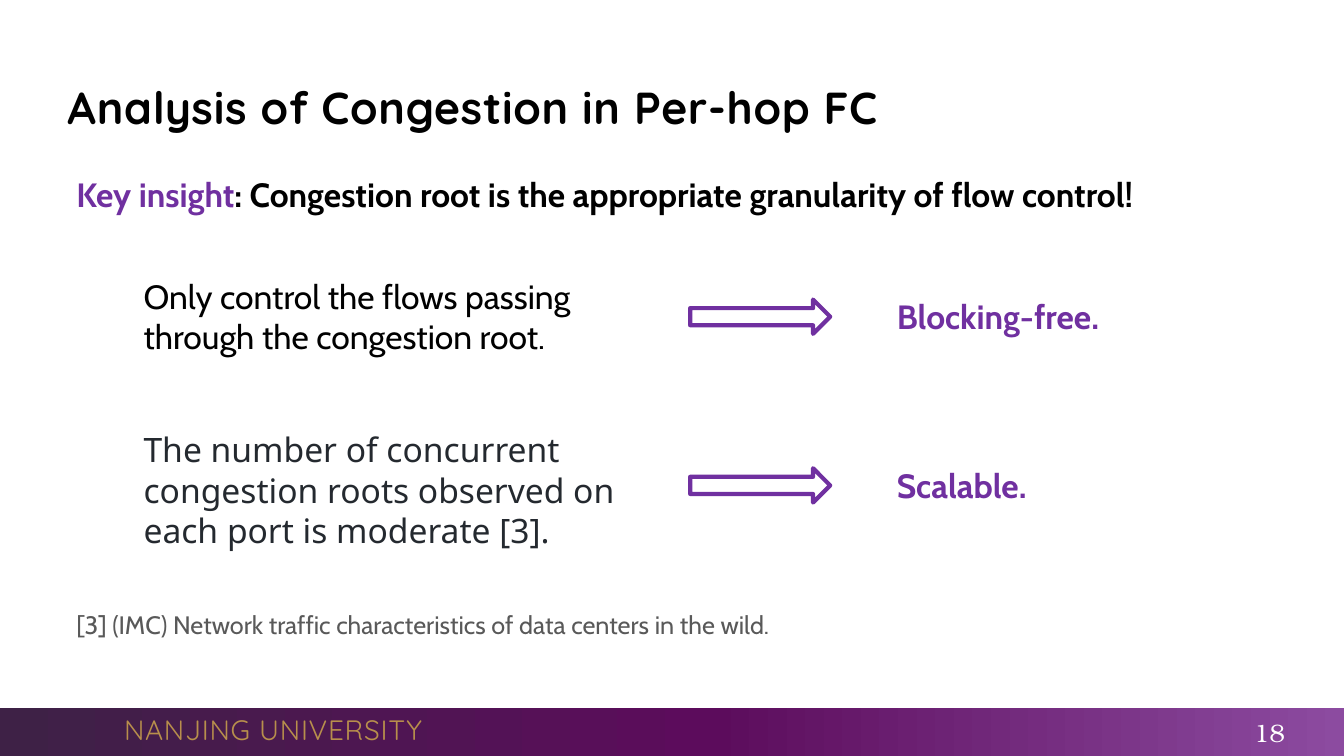
from copy import deepcopy

from pptx import Presentation
from pptx.dml.color import RGBColor
from pptx.enum.shapes import MSO_SHAPE
from pptx.enum.text import MSO_ANCHOR, MSO_AUTO_SIZE, PP_ALIGN
from pptx.oxml.ns import qn
from pptx.util import Pt

RECTANGLE = MSO_SHAPE.RECTANGLE
RIGHT_ARROW = MSO_SHAPE.RIGHT_ARROW
TOP, MIDDLE = MSO_ANCHOR.TOP, MSO_ANCHOR.MIDDLE
LEFT, RIGHT = PP_ALIGN.LEFT, PP_ALIGN.RIGHT
NO_AUTOFIT = MSO_AUTO_SIZE.NONE

COLORS = {
    "black": "000000",
    "white": "FFFFFF",
    "purple": "7030A0",
    "gold": "B88F4C",
    "slate": "24292F",
    "gray": "595959",
}
FOOTER_STOPS = [(0, "3E2146"), (0.53, "5C0C5C"), (1, "8C4BA0")]


def rgb(name):
    return RGBColor.from_string(COLORS[name])


def place(shape, left, top, width, height):
    shape.left, shape.top = Pt(left), Pt(top)
    shape.width, shape.height = Pt(width), Pt(height)


def write(shape, text, size=24, font="Cabin", color="black", bold=False,
          lead="", spacing=None, line=None, align=LEFT, anchor=TOP, wrap=True):
    tf = shape.text_frame
    tf.word_wrap = wrap
    tf.auto_size = NO_AUTOFIT
    tf.vertical_anchor = anchor
    p = tf.paragraphs[0]
    p.alignment = align
    if line:
        p.line_spacing = Pt(line)
    for part, part_color in ((lead, "purple"), (text, color)):
        if not part:
            continue
        r = p.add_run()
        r.text = part
        r.font.name = font
        r.font.size = Pt(size)
        r.font.bold = bold
        r.font.color.rgb = rgb(part_color)
        if spacing:
            r.font._element.set("spc", str(int(spacing * 100)))


def add_text(s, box, text, **fmt):
    shape = s.shapes.add_textbox(0, 0, 0, 0)
    place(shape, *box)
    write(shape, text, **fmt)


def add_footer_band(s):
    band = s.shapes.add_shape(RECTANGLE, 0, Pt(505.5), Pt(960), Pt(34.5))
    band.shadow.inherit = False
    band.line.fill.background()
    band.fill.gradient()
    band.fill.gradient_angle = 0
    stops = band._element.spPr.find(qn("a:gradFill")).find(qn("a:gsLst"))
    stops.insert(1, deepcopy(stops[0]))
    for stop, (position, color) in zip(band.fill.gradient_stops, FOOTER_STOPS):
        stop.position = position
        stop.color.rgb = RGBColor.from_string(color)


def add_arrow(s, top):
    arrow = s.shapes.add_shape(RIGHT_ARROW, Pt(493), Pt(top), Pt(100), Pt(24.5))
    arrow.shadow.inherit = False
    arrow.fill.background()
    arrow.line.color.rgb = rgb("purple")
    arrow.line.width = Pt(3)


def add_conclusion(s, top, text):
    add_arrow(s, top + 6)
    add_text(s, (633.5, top, 199, 36), text, color="purple", bold=True)


def main():
    prs = Presentation()
    prs.slide_width, prs.slide_height = Pt(960), Pt(540)
    s = prs.slides.add_slide(prs.slide_layouts[5])

    add_footer_band(s)
    add_text(s, (81.5, 505.5, 228, 31.5), "NANJING UNIVERSITY", size=20,
             font="Quicksand", color="gold", spacing=0.5, anchor=MIDDLE, wrap=False)
    add_text(s, (849, 510.5, 76, 25), "18", size=18, font="TeX Gyre Bonum",
             color="white", align=RIGHT, anchor=MIDDLE)

    title = s.shapes.title
    place(title, 41, 48.5, 864, 55.5)
    write(title, "Analysis of Congestion in Per-hop FC", size=32,
          font="Quicksand", bold=True, spacing=0.5, anchor=MIDDLE)

    add_text(s, (47.5, 120.5, 857, 36),
             ": Congestion root is the appropriate granularity of flow control!",
             lead="Key insight", bold=True)

    add_text(s, (95.5, 193.5, 384.5, 65.5),
             "Only control the flows passing through the congestion root.")
    add_conclusion(s, 208, "Blocking-free.")

    add_text(s, (95.5, 303, 384.5, 94.5),
             "The number of concurrent congestion roots observed on each port "
             "is moderate [3].", font="Noto Sans", color="slate", line=28.8)
    add_conclusion(s, 328.5, "Scalable.")

    add_text(s, (47.5, 432, 828, 29),
             "[3] (IMC) Network traffic characteristics of data centers in the wild.",
             size=18, color="gray")

    prs.save("out.pptx")


if __name__ == "__main__":
    main()
